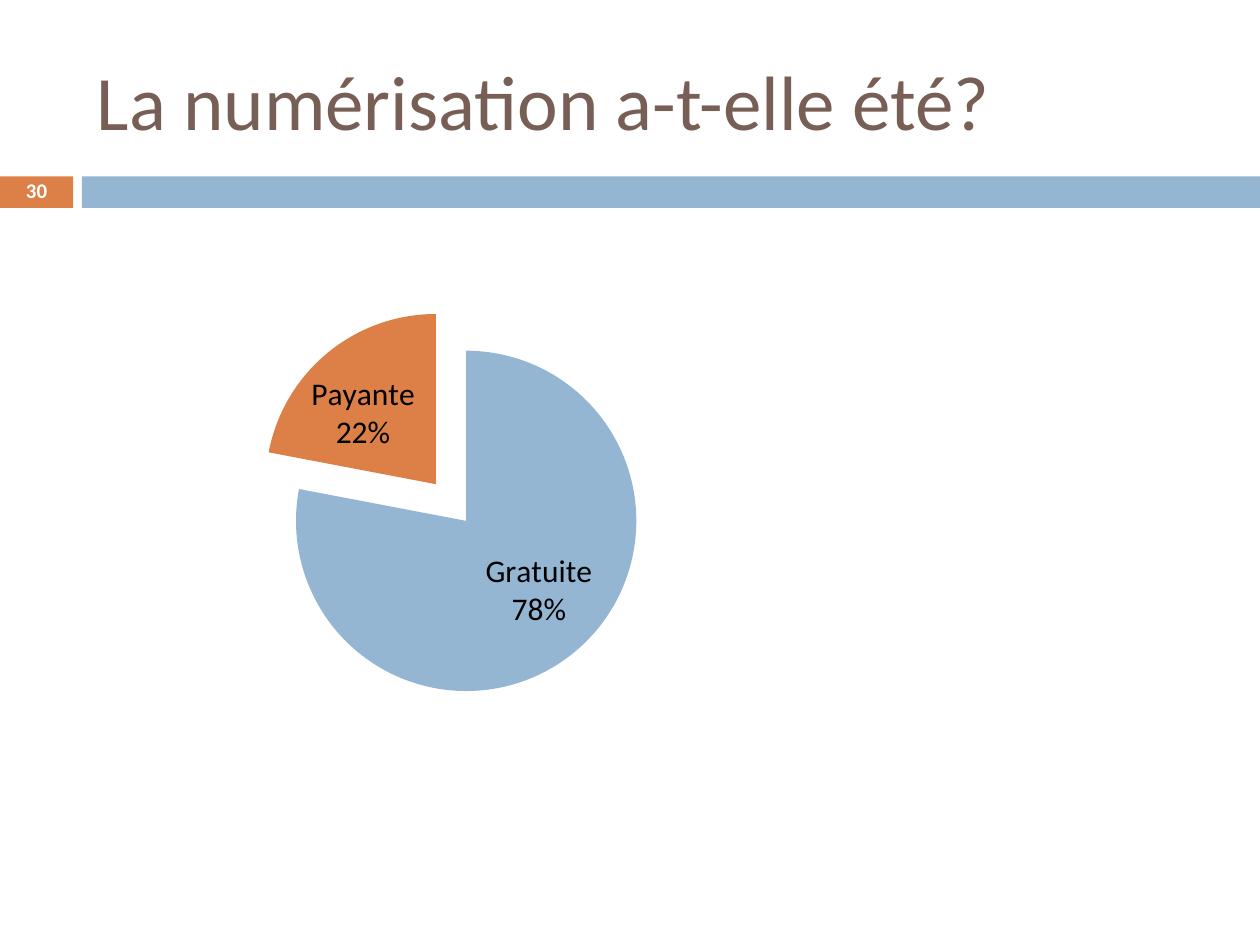
from lxml.etree import SubElement
from pptx import Presentation
from pptx.chart.data import CategoryChartData
from pptx.dml.color import RGBColor
from pptx.enum.chart import XL_CHART_TYPE, XL_LABEL_POSITION
from pptx.enum.shapes import MSO_SHAPE
from pptx.enum.text import MSO_ANCHOR, PP_ALIGN
from pptx.oxml import parse_xml
from pptx.oxml.ns import nsdecls, qn
from pptx.util import Inches, Pt

TITLE = "La numérisation a-t-elle été?"
PAGE = "30"
BLUE, ORANGE, BROWN = "94B6D2", "DD8047", "775F55"
SHARES = [("Gratuite", 78, BLUE), ("Payante", 22, ORANGE)]
EXPLODE = 14
WIDE, HIGH = 10, 7.5
TAB, GAP, BAND_TOP, BAND_HIGH = 0.58, 0.07, 1.4, 0.25
CHART = (0, 1.86, 7.16, 4.26)
PIE = 3.08  # side of the square that holds the exploded pie


def rgb(code):
    return RGBColor.from_string(code)


def inches(box):
    return [Inches(part) for part in box]


def style(font, size, color, bold=False):
    form = {"name": "Calibri", "size": Pt(size), "bold": bold}
    for key, value in form.items():
        setattr(font, key, value)
    font.color.rgb = rgb(color)


def add_bar(slide, left, width, color):
    box = inches((left, BAND_TOP, width, BAND_HIGH))
    bar = slide.shapes.add_shape(MSO_SHAPE.RECTANGLE, *box)
    bar.shadow.inherit = False
    bar.fill.solid()
    bar.fill.fore_color.rgb = rgb(color)
    bar.line.fill.background()


def add_text(slide, box, text, size, color, bold=False, align=PP_ALIGN.LEFT):
    frame = slide.shapes.add_textbox(*inches(box)).text_frame
    frame.word_wrap = True
    frame.vertical_anchor = MSO_ANCHOR.MIDDLE
    para = frame.paragraphs[0]
    para.alignment = align
    run = para.add_run()
    run.text = text
    style(run.font, size, color, bold)
    return para


def center_pie(chart):
    """Give the plot a fixed square in the middle of the chart."""
    w, h = PIE / CHART[2], PIE / CHART[3]
    sizes = {"x": (1 - w) / 2, "y": (1 - h) / 2, "w": w, "h": h}
    area = chart._chartSpace.chart.plotArea
    for old in area.findall(qn("c:layout")):
        area.remove(old)
    layout = parse_xml(f"<c:layout {nsdecls('c')}/>")
    area.insert(0, layout)
    manual = SubElement(layout, qn("c:manualLayout"))
    modes = {"layoutTarget": "inner", "xMode": "edge", "yMode": "edge"}
    for tag, value in (modes | sizes).items():
        text = value if tag in modes else f"{value:.4f}"
        SubElement(manual, qn(f"c:{tag}")).set("val", text)


def add_pie(slide):
    data = CategoryChartData()
    data.categories = [name for name, _, _ in SHARES]
    data.add_series("Series 1", [value for _, value, _ in SHARES])
    chart = slide.shapes.add_chart(XL_CHART_TYPE.PIE, *inches(CHART), data).chart
    chart.has_legend = chart.has_title = False
    style(chart.font, 18, "000000")
    center_pie(chart)

    plot = chart.plots[0]
    series = plot.series[0]
    for spot, (_, _, color) in enumerate(SHARES):
        fill = series.points[spot].format.fill
        fill.solid()
        fill.fore_color.rgb = rgb(color)
    burst = parse_xml(f'<c:explosion {nsdecls("c")} val="{EXPLODE}"/>')
    series._element.find(qn("c:dPt")).addprevious(burst)

    plot.has_data_labels = True
    labels = plot.data_labels
    form = {"show_category_name": True, "show_percentage": True,
            "show_value": False, "number_format": "0%",
            "number_format_is_linked": False,
            "position": XL_LABEL_POSITION.BEST_FIT}
    for key, value in form.items():
        setattr(labels, key, value)
    style(labels.font, 18, "000000")
    split = parse_xml(f"<c:separator {nsdecls('c')}>\n</c:separator>")
    labels._element.find(qn("c:showBubbleSize")).addnext(split)


def main():
    deck = Presentation()
    deck.slide_width, deck.slide_height = inches((WIDE, HIGH))
    slide = deck.slides.add_slide(deck.slide_layouts[6])
    start = TAB + GAP
    add_bar(slide, 0, TAB, ORANGE)
    add_bar(slide, start, WIDE - start, BLUE)
    page = add_text(slide, (0, 1.39, TAB, 0.27), PAGE, 11.9, "FFFFFF", True,
                    PP_ALIGN.CENTER)
    page.line_spacing = 0.8
    add_text(slide, (0.67, 0.25, 8.92, 1.08), TITLE, 44, BROWN)
    add_pie(slide)
    deck.save("out.pptx")


if __name__ == "__main__":
    main()
